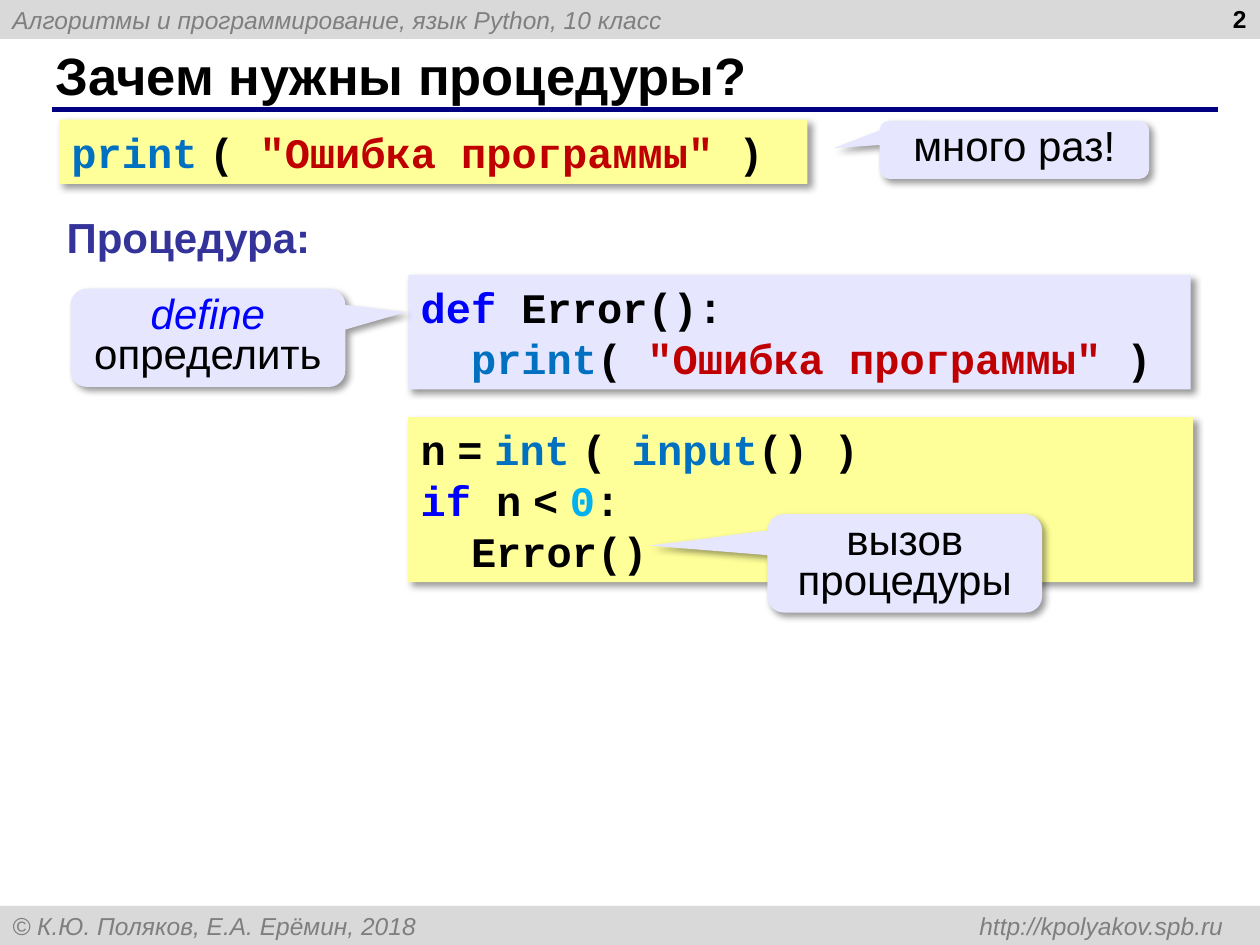
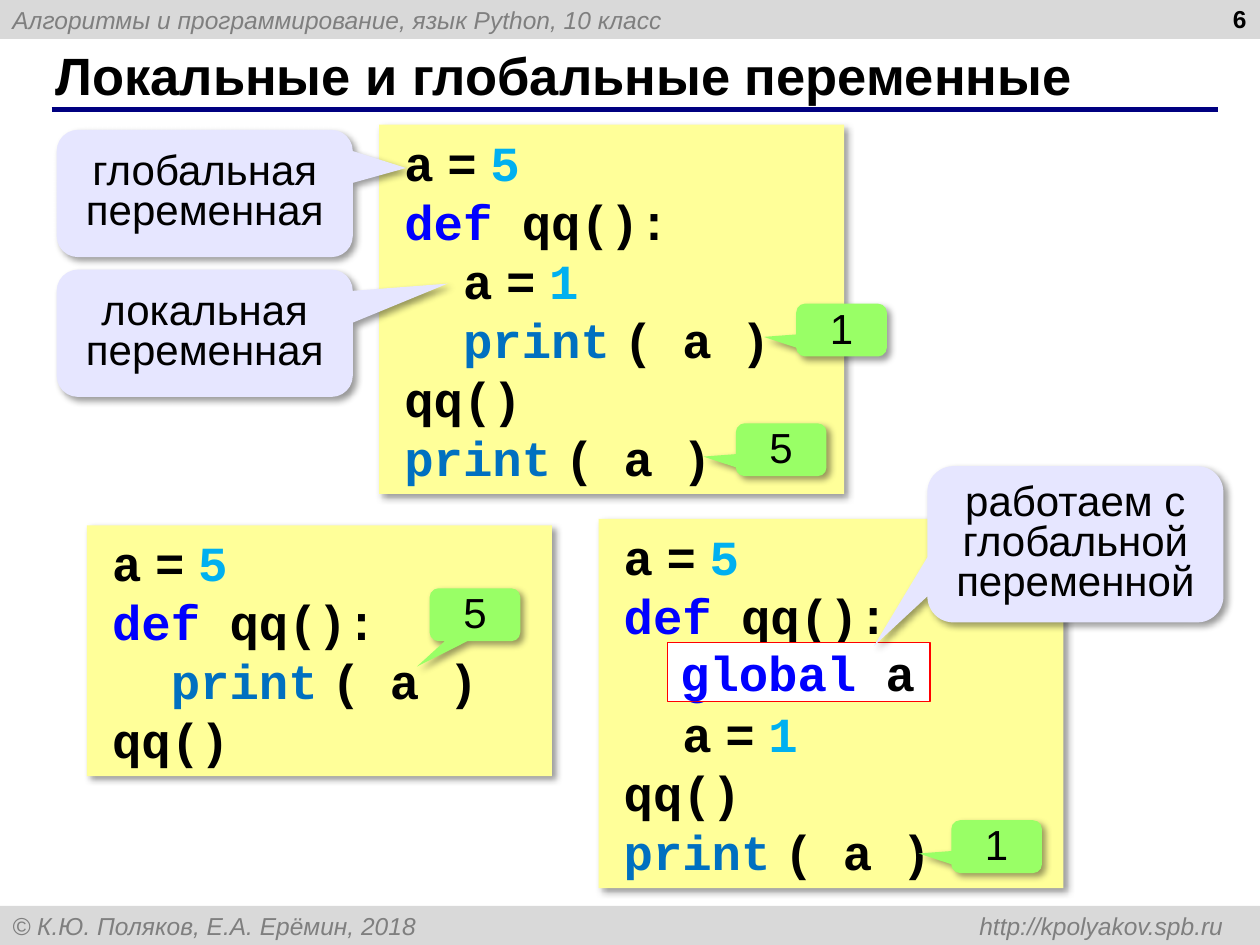
from dataclasses import dataclass

from pptx import Presentation
from pptx.dml.color import RGBColor as RGB
from pptx.enum.shapes import MSO_CONNECTOR as CONN, MSO_SHAPE as SHAPE
from pptx.enum.text import MSO_ANCHOR as ANCHOR, MSO_AUTO_SIZE as FIT, PP_ALIGN as ALIGN
from pptx.oxml import parse_xml
from pptx.oxml.ns import nsdecls, qn
from pptx.util import Pt


@dataclass(frozen=True)
class Theme:
    sans: str = "Arial"
    mono: str = "Courier New"
    title_size: int = 30
    code_size: int = 24
    big_code_size: int = 28
    text_size: int = 24
    small_size: int = 14
    black: RGB = RGB(0, 0, 0)
    white: RGB = RGB(255, 255, 255)
    band: RGB = RGB(0xD9, 0xD9, 0xD9)
    muted: RGB = RGB(0x7F, 0x7F, 0x7F)
    navy: RGB = RGB(0, 0, 0x80)
    heading: RGB = RGB(0x33, 0x33, 0x99)
    yellow: RGB = RGB(0xFF, 0xFF, 0x99)
    lilac: RGB = RGB(0xE6, 0xE6, 0xFF)
    green: RGB = RGB(0x99, 0xFF, 0x66)
    red: RGB = RGB(255, 0, 0)
    keyword: RGB = RGB(0, 0, 255)
    builtin: RGB = RGB(0, 0x70, 0xC0)
    string: RGB = RGB(0xC0, 0, 0)
    number: RGB = RGB(0, 0xB0, 0xF0)


T = Theme()
W, H, BAND_H = 720, 540, 22.3
COURSE = "Алгоритмы и программирование, язык Python, 10 класс"
FOOTER = "© К.Ю. Поляков, Е.А. Ерёмин, 2018 \thttp://kpolyakov.spb.ru"

# Colours of code tokens; other tokens are black
SYNTAX = dict.fromkeys(["def", "if", "global"], T.keyword)
SYNTAX.update(dict.fromkeys(["print", "int", "input"], T.builtin))
SYNTAX.update(dict.fromkeys("015", T.number))
SYNTAX['"Ошибка программы"'] = T.string


def add_box(s, kind, rect, fill, shadow=True):
    """Add a filled shape without an outline, with a soft shadow if wanted."""
    sp = s.shapes.add_shape(kind, *map(Pt, rect))
    sp.fill.solid()
    sp.fill.fore_color.rgb = fill
    sp.line.fill.background()
    sp.shadow.inherit = False
    if shadow:
        sp._element.spPr.find(qn("a:effectLst")).append(parse_xml(
            f'<a:outerShdw {nsdecls("a")} blurRad="50800" dist="38100" dir="2700000" '
            'algn="tl" rotWithShape="0"><a:srgbClr val="000000"><a:alpha val="40000"/>'
            '</a:srgbClr></a:outerShdw>'))
    sp.text_frame.word_wrap = True
    sp.text_frame.vertical_anchor = ANCHOR.MIDDLE
    return sp


def write(sp, lines, size, color=T.black, align=ALIGN.LEFT, spacing=None,
          code=False, bold=False, italic=False):
    """Fill a shape with lines; "|" parts code tokens, "~" is a narrow space."""
    tf = sp.text_frame
    for i, line in enumerate(lines):
        p = tf.paragraphs[0] if i == 0 else tf.add_paragraph()
        p.alignment = align
        p.line_spacing = spacing
        for token in line.split("|"):
            r = p.add_run()
            r.text = token.replace("~", " ")
            r.font.name = T.mono if code and token != "~" else T.sans
            r.font.size = Pt(size)
            r.font.bold, r.font.italic = bold, italic
            r.font.color.rgb = SYNTAX.get(token, T.black) if code else color


prs = Presentation()
prs.slide_width, prs.slide_height = Pt(W), Pt(H)

ERROR_PRINT = '( |"Ошибка программы"| )'
START = ["a|~|=|~|5", "def| qq():"]
LOCAL_A = "  |a|~|=|~|1"
PRINT_A = "print|~|( a )"

slides = [
    dict(
        number="2", title="Зачем нужны процедуры?", code_size=T.code_size, indent=7.2,
        code=[
            ((33.8, 68.4, 427.7, 36.7), T.yellow, ["print|~|" + ERROR_PRINT]),
            ((233.3, 157, 447.1, 65.5), T.lilac,
             ["def| Error():", "  |print|" + ERROR_PRINT]),
            ((233.3, 238.3, 448.6, 94.3), T.yellow,
             ["n|~|=|~|int|~|( |input|() )", "if| n|~|<|~|0|:", "  Error()"]),
        ],
        callouts=[
            ((502.6, 69.1, 154.1, 33.1), (-0.67, -0.03), ["много раз!"]),
            ((438.5, 293.8, 157, 56.2), (-0.93, -0.18), ["вызов процедуры"]),
            ((40.3, 164.9, 157, 56.2), (0.72, -0.26), ["define |определить"]),
        ],
        outputs=[],
    ),
    dict(
        number="6", title="Локальные и глобальные переменные",
        code_size=T.big_code_size, indent=14.4,
        code=[
            ((216.7, 71.3, 265.7, 211), T.yellow,
             START + [LOCAL_A, "  |" + PRINT_A, "qq()", PRINT_A]),
            ((49.7, 300.2, 265.7, 143.3), T.yellow, START + ["  |" + PRINT_A, "qq()"]),
            ((342, 296.6, 265.7, 211), T.yellow,
             START + ["  |global| a", LOCAL_A, "qq()", PRINT_A]),
        ],
        callouts=[
            ((32.4, 74.2, 169.2, 72.7), (0.68, -0.2), ["глобальная переменная"]),
            ((32.4, 154.1, 169.2, 72.7), (0.82, -0.39), ["локальная переменная"]),
            ((529.9, 266.4, 169.2, 89.3), (-0.68, 0.65),
             ["работаем с", "глобальной переменной"]),
        ],
        outputs=[
            ((455, 173.5), (-0.86, 0.13), "1"),
            ((420.5, 241.9), (-0.86, 0.13), "5"),
            ((245.5, 336.2), (-0.64, 0.98), "5"),
            ((543.6, 468.7), (-0.86, 0.13), "1"),
        ],
    ),
]

for data in slides:
    s = prs.slides.add_slide(prs.slide_layouts[5])

    # Header and footer bands
    for y, text in ((0, COURSE), (H - BAND_H, FOOTER)):
        sp = add_box(s, SHAPE.RECTANGLE, (0, y, W, BAND_H), T.band, shadow=False)
        write(sp, [text], T.small_size, T.muted, italic=True)
        sp.text_frame.paragraphs[0]._p.get_or_add_pPr().append(parse_xml(
            f'<a:tabLst {nsdecls("a")}><a:tab pos="{Pt(692)}" algn="r"/></a:tabLst>'))

    # Title and its rule
    rule = s.shapes.add_connector(CONN.STRAIGHT, Pt(29.5), Pt(62.6), Pt(696.2), Pt(62.6))
    rule.line.color.rgb = T.navy
    rule.line.width = Pt(3)
    rule._element.spPr.append(parse_xml(f'<a:effectLst {nsdecls("a")}/>'))
    title = s.shapes.title
    title.left, title.top, title.width, title.height = map(Pt, (24.5, 23.8, 659.5, 37.4))
    title.text_frame.auto_size = FIT.NONE
    title.text_frame.vertical_anchor = ANCHOR.MIDDLE
    write(title, [data["title"]], T.title_size, bold=True)

    # Slide number
    sp = s.shapes.add_textbox(Pt(551.5), Pt(-1.4), Pt(167.8), Pt(37.4))
    sp.text_frame.word_wrap = True
    write(sp, [data["number"]], T.small_size, align=ALIGN.RIGHT, bold=True)

    # Code blocks
    size = data["code_size"]
    for rect, fill, lines in data["code"]:
        sp = add_box(s, SHAPE.RECTANGLE, rect, fill)
        sp.text_frame.margin_left = Pt(data["indent"])
        write(sp, lines, size, spacing=Pt(round(size * 1.205, 1)), code=True, bold=True)

    if data["number"] == "2":
        # Subheading
        sp = s.shapes.add_textbox(Pt(31), Pt(117.4), Pt(154.8), Pt(36.7))
        write(sp, ["Процедура:"], T.text_size, T.heading, bold=True)
    else:
        # Framed global statement
        sp = add_box(s, SHAPE.RECTANGLE, (381.6, 367.2, 149.8, 33.8), T.white, shadow=False)
        sp.line.color.rgb = T.red
        sp.line.width = Pt(0.75)
        sp.text_frame.margin_top = sp.text_frame.margin_bottom = 0
        sp.text_frame.word_wrap = False
        write(sp, ["global| a"], size, spacing=Pt(33.7), code=True, bold=True)

    # Explanations and program outputs
    notes = [(rect, tip, lines, T.lilac, 3.6) for rect, tip, lines in data["callouts"]]
    notes += [((*pos, 51.8, 30.2), tip, [value], T.green, 5.8)
              for pos, tip, value in data["outputs"]]
    for rect, tip, lines, fill, margin_top in notes:
        sp = add_box(s, SHAPE.ROUNDED_RECTANGULAR_CALLOUT, rect, fill)
        sp.adjustments[0], sp.adjustments[1] = tip
        sp.text_frame.margin_top = Pt(margin_top)
        write(sp, lines, T.text_size, align=ALIGN.CENTER, spacing=0.8)
        r = sp.text_frame.paragraphs[0].runs[0]
        if r.text == "define ":
            r.font.italic = True
            r.font.color.rgb = T.keyword

prs.save("out.pptx")
